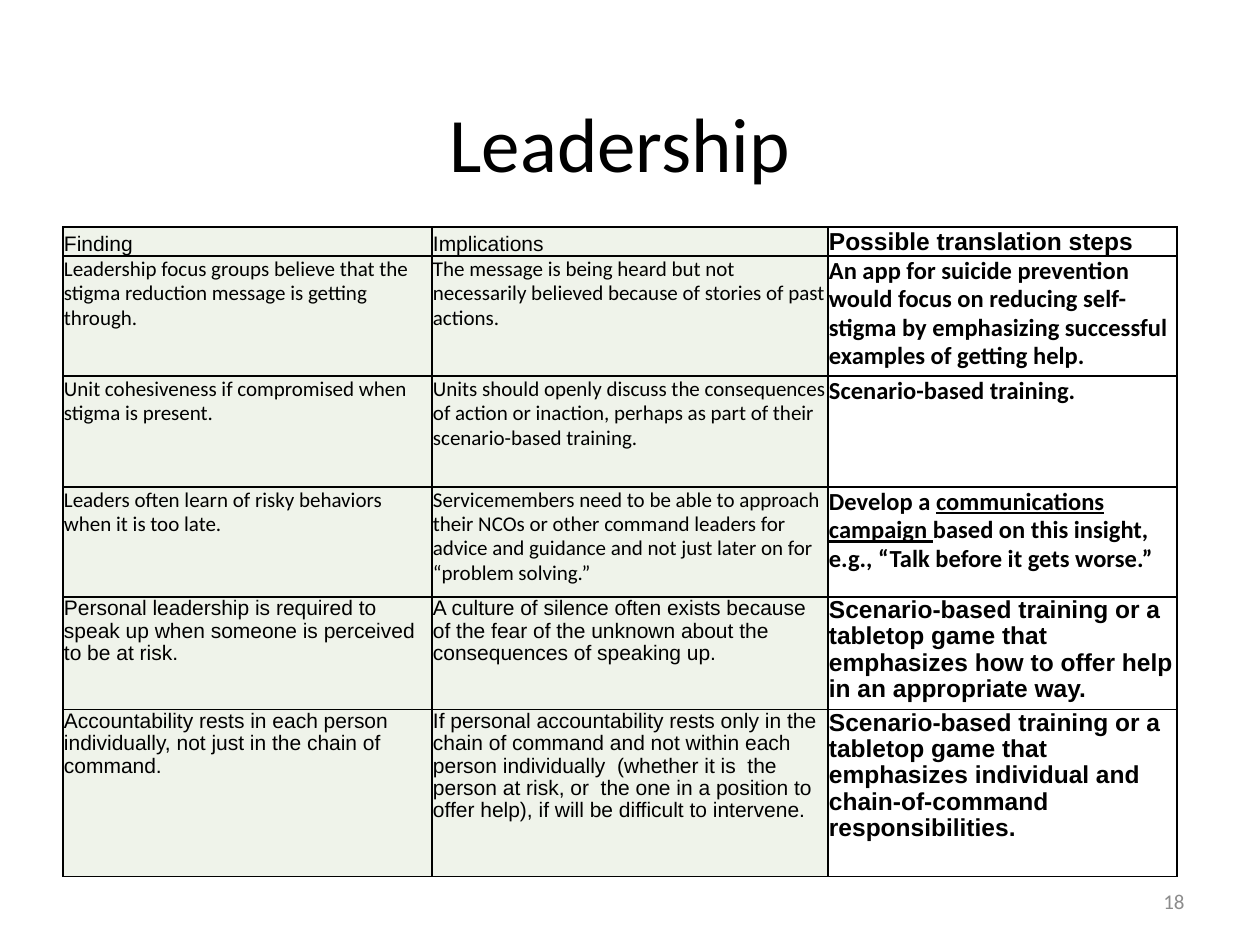
from lxml.etree import SubElement
from pptx import Presentation
from pptx.dml.color import RGBColor
from pptx.enum.text import MSO_ANCHOR, PP_ALIGN
from pptx.oxml.ns import qn
from pptx.util import Emu, Inches, Pt

COLORS = {"text": "000000", "step": "010101", "number": "8C8C8C",
          "tint": "EFF3EA", "border": "000000"}
COLUMN_WIDTHS = [369, 396, 349]
ROW_HEIGHTS = [29, 120, 111, 110, 111, 167]
HEADINGS = ["Finding", "Implications", "Possible translation steps"]
FINDINGS = [
    ("Calibri",
     "Leadership focus groups believe that the stigma reduction message is getting through.",
     "The message is being heard but not necessarily believed because of stories of past actions.",
     "An app for suicide prevention would focus on reducing self-stigma by emphasizing "
     "successful examples of getting help."),
    ("Calibri",
     "Unit cohesiveness if compromised when stigma is present.",
     "Units should openly discuss the consequences of action or inaction, perhaps as part of "
     "their scenario-based training.",
     "Scenario-based training."),
    ("Calibri",
     "Leaders often learn of risky behaviors when it is too late.",
     "Servicemembers need to be able to approach their NCOs or other command leaders for advice "
     "and guidance and not just later on for “problem solving.”",
     "Develop a |communications campaign |based on this insight, e.g., “Talk before it gets worse.”"),
    ("Arial",
     "Personal leadership is required to speak up when someone is perceived to be at risk.",
     "A culture of silence often exists because of the fear of the unknown about the "
     "consequences of speaking up.",
     "Scenario-based training or a tabletop game that emphasizes how to offer help in an "
     "appropriate way."),
    ("Arial",
     "Accountability rests in each person individually, not just in the chain of command.",
     "If personal accountability rests only in the chain of command and not within each person "
     "individually  (whether it is  the person at risk, or  the one in a position to offer "
     "help), if will be difficult to intervene.",
     "Scenario-based training or a tabletop game that emphasizes individual and "
     "chain-of-command responsibilities."),
]


def px(length):
    return Emu(round(length * 914400 / 126))


def color(name):
    return RGBColor.from_string(COLORS[name])


def set_font(paragraph, family, size, color_name, bold=False):
    font = paragraph.font
    font.name = family
    font.size = Pt(size)
    font.bold = bold
    font.color.rgb = color(color_name)


def add_borders(cell):
    properties = cell._tc.get_or_add_tcPr()
    for index, side in enumerate(("lnL", "lnR", "lnT", "lnB")):
        line = SubElement(properties, qn(f"a:{side}"), w=str(Pt(1)))
        fill = SubElement(line, qn("a:solidFill"))
        SubElement(fill, qn("a:srgbClr"), val=COLORS["border"])
        properties.insert(index, line)


def fill_cell(cell, text, family, is_header, is_step):
    cell.margin_left = cell.margin_right = cell.margin_top = px(1)
    cell.margin_bottom = 0
    cell.vertical_anchor = MSO_ANCHOR.BOTTOM if is_header else MSO_ANCHOR.TOP
    if is_step:
        cell.fill.background()
    else:
        cell.fill.solid()
        cell.fill.fore_color.rgb = color("tint")
    add_borders(cell)
    paragraph = cell.text_frame.paragraphs[0]
    paragraph.line_spacing = 0.95
    for index, part in enumerate(text.split("|")):
        span = paragraph.add_run()
        span.text = part
        if index % 2:
            span.font.underline = True
    color_name = "step" if is_step and not is_header else "text"
    set_font(paragraph, family, 14 if is_step else 12, color_name, is_step)


def place_title(page, left, top, width, height):
    title = page.shapes.title
    title.left, title.top, title.width, title.height = map(px, (left, top, width, height))
    title.text_frame.text = "Leadership"
    title.text_frame.vertical_anchor = MSO_ANCHOR.MIDDLE
    paragraph = title.text_frame.paragraphs[0]
    paragraph.alignment = PP_ALIGN.CENTER
    set_font(paragraph, "Calibri", 44, "text")


def place_findings(page, left, top):
    rows = [("Arial", *HEADINGS), *FINDINGS]
    table = page.shapes.add_table(
        len(rows), len(HEADINGS), px(left), px(top),
        px(sum(COLUMN_WIDTHS)), px(sum(ROW_HEIGHTS))).table
    table.first_row = table.horz_banding = False
    for column, width in zip(table.columns, COLUMN_WIDTHS):
        column.width = px(width)
    for row_index, (family, *texts) in enumerate(rows):
        table.rows[row_index].height = px(ROW_HEIGHTS[row_index])
        for column_index, text in enumerate(texts):
            fill_cell(table.cell(row_index, column_index), text, family,
                      row_index == 0, column_index == 2)


def place_page_number(page, left, top, width, height):
    box = page.shapes.add_textbox(*map(px, (left, top, width, height)))
    frame = box.text_frame
    frame.word_wrap = True
    frame.vertical_anchor = MSO_ANCHOR.MIDDLE
    frame.text = "18"
    frame.paragraphs[0].alignment = PP_ALIGN.RIGHT
    set_font(frame.paragraphs[0], "Calibri", 12, "number")


def main():
    deck = Presentation()
    deck.slide_width, deck.slide_height = Inches(10), Inches(7.5)
    page = deck.slides.add_slide(deck.slide_layouts[5])
    place_title(page, 53, 63, 1134, 158)
    place_page_number(page, 903, 876, 294, 50)
    place_findings(page, 63, 227)
    deck.save("out.pptx")


if __name__ == "__main__":
    main()
